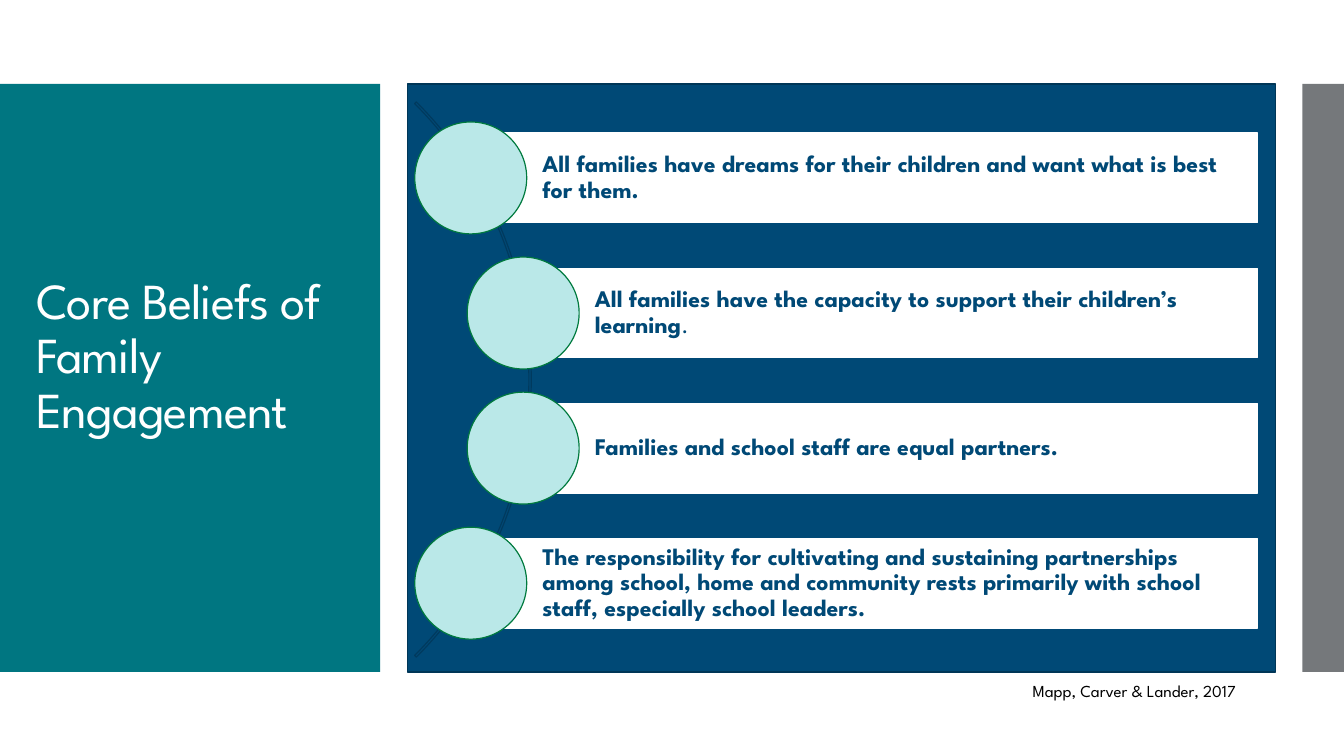
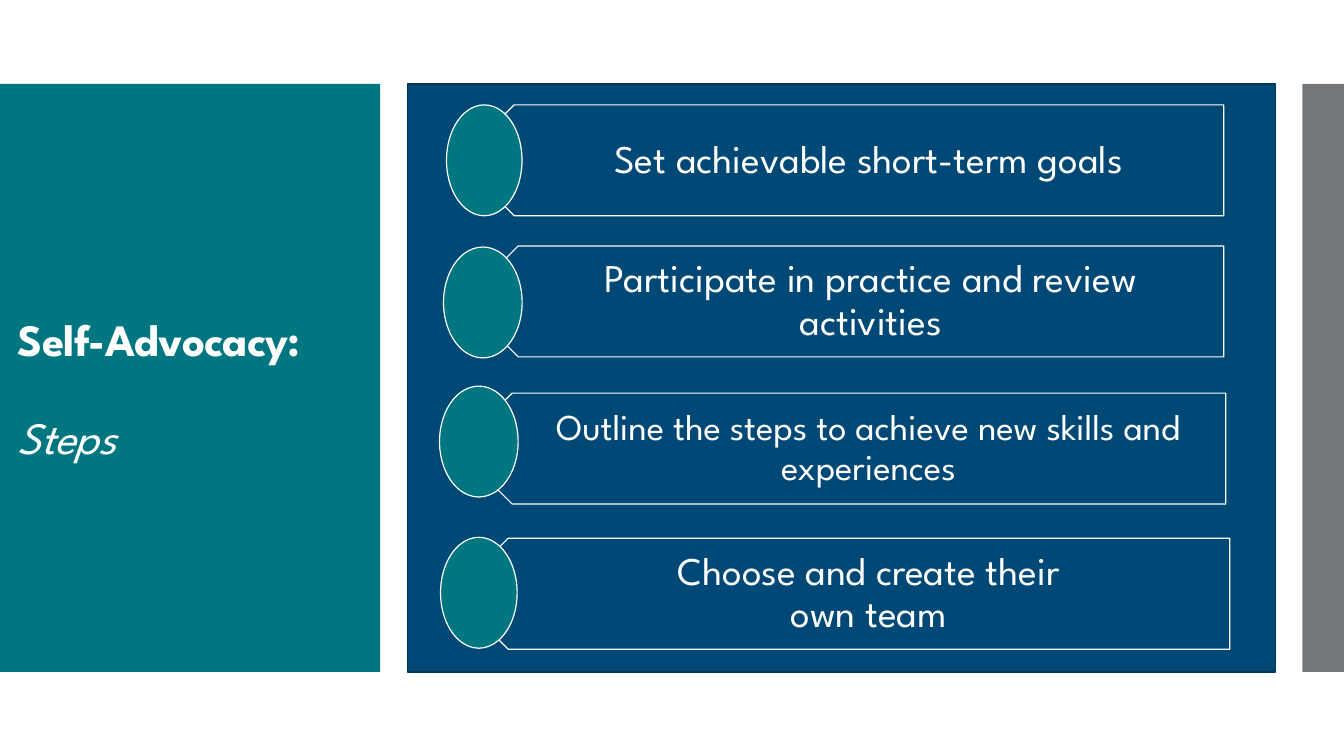
"""Builds two slides on family engagement and self-advocacy."""
import dataclasses
import typing

import pptx
import pptx.dml.color
import pptx.enum.shapes
import pptx.enum.text
import pptx.oxml.ns
import pptx.shapes.autoshape
import pptx.slide
import pptx.util

RGB = pptx.dml.color.RGBColor
Shape = pptx.shapes.autoshape.Shape
Slide = pptx.slide.Slide
Kind = pptx.enum.shapes.MSO_SHAPE
Align = pptx.enum.text.PP_ALIGN
Anchor = pptx.enum.text.MSO_ANCHOR
Inches = pptx.util.Inches
Pt = pptx.util.Pt
Format = dict[str, typing.Any]

NAVY = RGB(0x00, 0x49, 0x76)
NAVY_EDGE = RGB(0x00, 0x36, 0x57)
ARC_NAVY = RGB(0x00, 0x3A, 0x5E)
TEAL = RGB(0x00, 0x76, 0x81)
GREY = RGB(0x75, 0x78, 0x7B)
MINT = RGB(0xBA, 0xE8, 0xE8)
GREEN = RGB(0x00, 0x7A, 0x3E)
WHITE = RGB(0xFF, 0xFF, 0xFF)
BLACK = RGB(0x00, 0x00, 0x00)

WIDTH, HEIGHT = Inches(13.33), Inches(7.5)
FONT = "League Spartan"
EDGE = Pt(0.85)
TITLE_TRACKING = "-60"


@dataclasses.dataclass(frozen=True)
class Box:
    """A rectangle in percent of the slide's width and height."""
    left: float
    top: float
    width: float
    height: float

    def emu(self) -> tuple[int, int, int, int]:
        """Return left, top, width and height as lengths."""
        return (round(WIDTH * self.left / 100), round(HEIGHT * self.top / 100),
                round(WIDTH * self.width / 100), round(HEIGHT * self.height / 100))


@dataclasses.dataclass(frozen=True)
class Run:
    """A stretch of text with its own font values."""
    text: str
    font: Format = dataclasses.field(default_factory=dict)


@dataclasses.dataclass(frozen=True)
class Panel:
    """A band that every slide carries."""
    box: Box
    fill: RGB
    line: RGB | None = None


@dataclasses.dataclass(frozen=True)
class Belief:
    """A core belief, indented to follow the arc."""
    left: float
    runs: tuple[Run, ...]


@dataclasses.dataclass(frozen=True)
class Step:
    """A step with its plate and its oval marker."""
    plate: Box
    oval: Box
    size: int
    lines: tuple[str, ...]


BAND_TOP, BAND_HEIGHT = 11.11, 77.78
PANELS = (
    Panel(Box(30.3, BAND_TOP, 64.58, BAND_HEIGHT), NAVY, NAVY_EDGE),
    Panel(Box(0, BAND_TOP, 28.28, BAND_HEIGHT), TEAL),
    Panel(Box(96.9, BAND_TOP, 3.1, BAND_HEIGHT), GREY),
)

BAR_TOP, BAR_PITCH, BAR_HEIGHT, BAR_RIGHT = 17.6, 17.87, 11.87, 93.55
OUTER, INNER = 35.03, 38.93
CIRCLE_WIDTH, CIRCLE_HEIGHT = 8.33, 14.81
ARC_BOX = Box(-18.9, -1.73, 58.43, 103.87)
ARC_ADJUSTMENTS = (189, 27, 0.003)
BELIEFS = (
    Belief(OUTER, (Run("All families have dreams for their children and want what is best for them."),)),
    Belief(INNER, (Run("All families have the capacity to support their children’s learning"),
                   Run(".", {"bold": False}))),
    Belief(INNER, (Run("Families and school staff are equal partners."),)),
    Belief(OUTER, (Run("The responsibility for cultivating and sustaining partnerships among school, "
                       "home and community rests primarily with school staff, especially school leaders."),)),
)

ROW_HEIGHT = 14.67
PLATE_TIP = 2.06
STEPS = (
    Step(Box(34.13, 13.87, 56.92, ROW_HEIGHT), Box(33.22, 13.87, 5.62, ROW_HEIGHT), 28,
         ("Set achievable short-term goals",)),
    Step(Box(34.43, 32.53, 56.62, ROW_HEIGHT), Box(33, 32.67, 5.85, ROW_HEIGHT), 28,
         ("Participate in practice and review activities",)),
    Step(Box(33.98, 52, 57.22, ROW_HEIGHT), Box(32.7, 51.07, 5.85, ROW_HEIGHT), 26,
         ("Outline the steps to achieve new skills and experiences",)),
    Step(Box(33.68, 71.2, 57.82, ROW_HEIGHT), Box(32.78, 71.07, 5.7, ROW_HEIGHT), 28,
         ("Choose and create their", "own team")),
)

MIDDLE: Format = {"word_wrap": True, "vertical_anchor": Anchor.MIDDLE}
BAR_FRAME: Format = MIDDLE | {"margin_left": Inches(0.71), "margin_right": Inches(0.05),
                              "margin_top": Inches(0.05), "margin_bottom": Inches(0.05)}
STEP_FRAME: Format = MIDDLE | {"margin_left": Inches(0.49), "margin_right": Inches(0.22),
                               "margin_top": Inches(0.12), "margin_bottom": Inches(0.12)}
TIGHT_LEFT: Format = {"alignment": Align.LEFT, "line_spacing": 0.9}
TIGHT_CENTRE: Format = {"alignment": Align.CENTER, "line_spacing": 0.9}


def apply(target: typing.Any, values: Format) -> None:
    """Set each format value on the target."""
    for key, value in values.items():
        setattr(target, key, value)


def draw(slide: Slide, kind: Kind, box: Box, fill: RGB | None, line: RGB | None = None) -> Shape:
    """Draw a flat preset shape."""
    shape = slide.shapes.add_shape(kind, *box.emu())
    shape.shadow.inherit = False
    if fill is None:
        shape.fill.background()
    else:
        shape.fill.solid()
        shape.fill.fore_color.rgb = fill
    if line is None:
        shape.line.fill.background()
    else:
        shape.line.color.rgb = line
        shape.line.width = EDGE
    return shape


def write(shape: Shape, lines: typing.Sequence[tuple[Run, ...]], size: int, colour: RGB,
          frame: Format, paragraph_format: Format, bold: bool = False, gap: int = 0) -> None:
    """Write paragraphs of runs, with a gap in points between them."""
    apply(shape.text_frame, frame)
    for index, runs in enumerate(lines):
        paragraph = shape.text_frame.add_paragraph() if index else shape.text_frame.paragraphs[0]
        apply(paragraph, paragraph_format)
        if index and gap:
            paragraph.space_before = Pt(gap)
        for part in runs:
            run = paragraph.add_run()
            run.text = part.text
            apply(run.font, {"name": FONT, "size": Pt(size), "bold": bold} | part.font)
            run.font.color.rgb = colour


def start_slide(deck: typing.Any, title_box: Box, title: typing.Sequence[tuple[Run, ...]],
                size: int, gap: int = 0) -> Slide:
    """Add a slide with the shared bands and title style."""
    slide = deck.slides.add_slide(deck.slide_layouts[6])
    for panel in PANELS:
        draw(slide, Kind.RECTANGLE, panel.box, panel.fill, panel.line)
    heading = slide.shapes.add_textbox(*title_box.emu())
    write(heading, title, size, WHITE, MIDDLE, TIGHT_LEFT, gap=gap)
    for properties in heading.element.iter(pptx.oxml.ns.qn("a:rPr")):
        properties.set("spc", TITLE_TRACKING)
    return slide


def add_beliefs(deck: typing.Any) -> None:
    """Add the slide of core beliefs along an arc."""
    slide = start_slide(deck, Box(1.95, 13.73, 25.2, 67.07),
                        ((Run("Core Beliefs of Family Engagement"),),), 36)
    arc = draw(slide, Kind.BLOCK_ARC, ARC_BOX, None, ARC_NAVY)
    for index, value in enumerate(ARC_ADJUSTMENTS):
        arc.adjustments[index] = value
    for row, belief in enumerate(BELIEFS):
        top = BAR_TOP + row * BAR_PITCH
        bar = draw(slide, Kind.RECTANGLE,
                   Box(belief.left, top, BAR_RIGHT - belief.left, BAR_HEIGHT), WHITE, WHITE)
        write(bar, (belief.runs,), 17, NAVY, BAR_FRAME, TIGHT_LEFT, bold=True)
        draw(slide, Kind.OVAL,
             Box(belief.left - CIRCLE_WIDTH / 2, top + (BAR_HEIGHT - CIRCLE_HEIGHT) / 2,
                 CIRCLE_WIDTH, CIRCLE_HEIGHT), MINT, GREEN)
    credit = slide.shapes.add_textbox(*Box(76.1, 89.33, 21.26, 4).emu())
    write(credit, ((Run("Mapp, Carver & Lander, 2017"),),), 12, BLACK,
          {"word_wrap": True}, {"alignment": Align.LEFT})


def add_steps(deck: typing.Any) -> None:
    """Add the slide of self-advocacy steps."""
    title = ((Run("Self-Advocacy:", {"bold": True}),), (Run("Steps", {"italic": True}),))
    slide = start_slide(deck, Box(0.6, 24.27, 26.78, 54.93), title, 32, gap=35)
    for step in STEPS:
        plate = draw(slide, Kind.PENTAGON, step.plate, NAVY, WHITE)
        plate.rotation = 180
        label_box = dataclasses.replace(step.plate, left=step.plate.left + PLATE_TIP,
                                        width=step.plate.width - PLATE_TIP)
        label = slide.shapes.add_textbox(*label_box.emu())
        write(label, [(Run(line),) for line in step.lines], step.size, WHITE,
              STEP_FRAME, TIGHT_CENTRE)
        draw(slide, Kind.OVAL, step.oval, TEAL, WHITE)


def main() -> None:
    """Build and save the deck."""
    deck = pptx.Presentation()
    apply(deck, {"slide_width": WIDTH, "slide_height": HEIGHT})
    add_beliefs(deck)
    add_steps(deck)
    deck.save("out.pptx")


if __name__ == "__main__":
    main()
